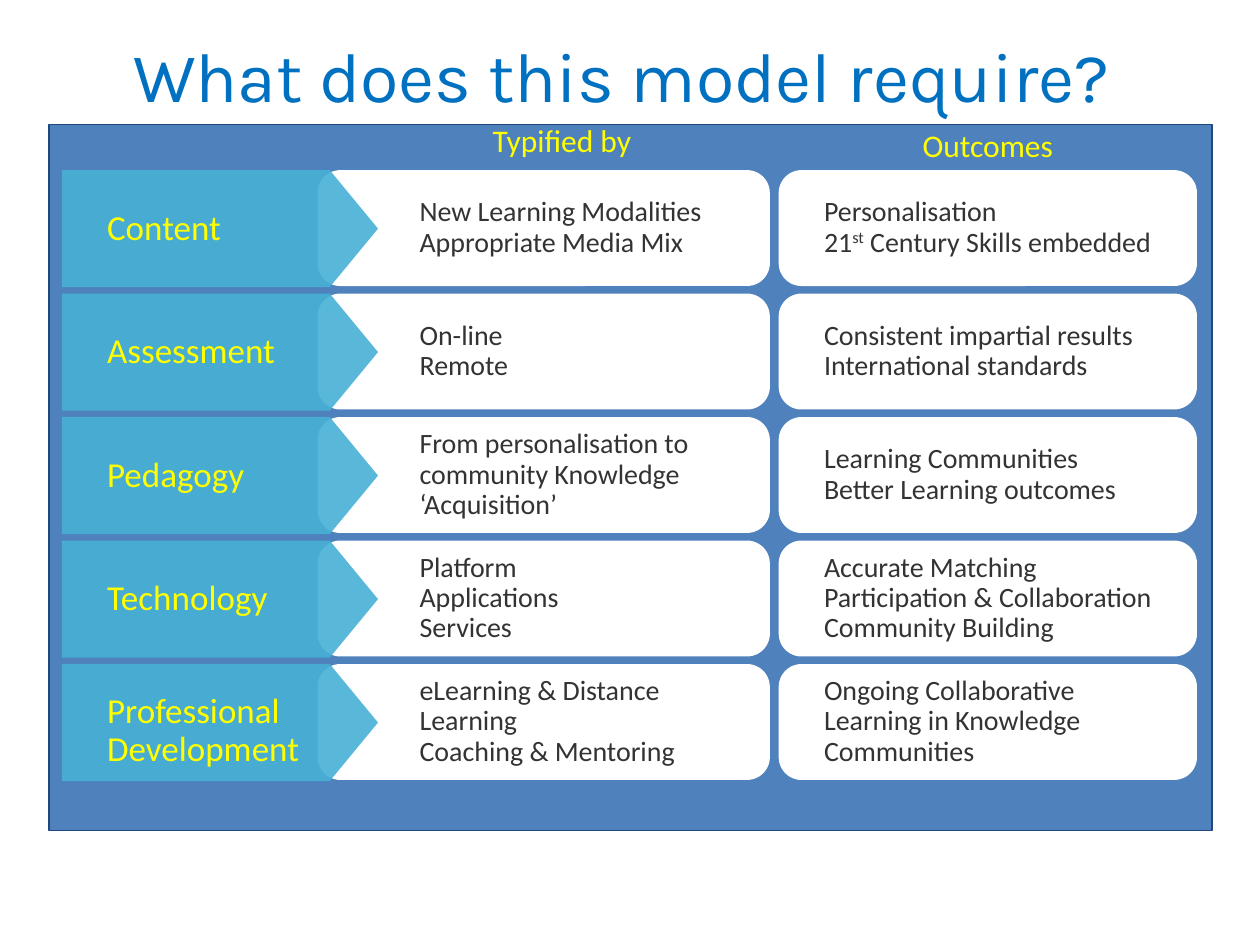
from lxml.etree import SubElement
from pptx import Presentation
from pptx.dml.color import RGBColor
from pptx.enum.shapes import MSO_SHAPE as Shape
from pptx.enum.text import MSO_ANCHOR as Anchor, MSO_AUTO_SIZE as AutoSize, PP_ALIGN as Align
from pptx.oxml.ns import qn
from pptx.util import Inches, Pt

TITLE_BLUE = RGBColor(0x00, 0x70, 0xC0)
PANEL_BLUE = RGBColor(0x4F, 0x81, 0xBD)
PANEL_EDGE = RGBColor(0x1F, 0x49, 0x7D)
ARROW_BLUE = RGBColor(0x47, 0xB0, 0xD5)
YELLOW = RGBColor(0xFF, 0xFF, 0x00)
WHITE = RGBColor(0xFF, 0xFF, 0xFF)
DARK = RGBColor(0x33, 0x33, 0x33)

TITLE = "What does this model require?"
HEADINGS = ("Typified by", "Outcomes")
SUPERSCRIPT = "st"  # a run made of exactly this text is raised

# (requirement, typified by, outcomes, lines in each); a paragraph is a tuple of runs
ROWS = [
    ("Content",
     [("New Learning Modalities",), ("Appropriate Media Mix",)],
     [("Personalisation",), ("21", SUPERSCRIPT, " Century Skills embedded")], (1, 2, 2)),
    ("Assessment",
     [("On-line",), ("Remote",)],
     [("Consistent impartial results",), ("International standards",)], (1, 2, 2)),
    ("Pedagogy",
     [("From personalisation to community Knowledge ‘Acquisition’",)],
     [("Learning Communities",), ("Better Learning outcomes",)], (1, 3, 2)),
    ("Technology",
     [("Platform",), ("Applications",), ("Services",)],
     [("Accurate Matching",), ("Participation & Collaboration",), ("Community Building",)],
     (1, 3, 3)),
    ("Professional Development",
     [("eLearning & Distance Learning",), ("Coaching & Mentoring",)],
     [("Ongoing Collaborative Learning in Knowledge Communities",)], (1, 3, 3)),
]

ROW_TOP, ROW_PITCH = 1.35, 0.98
CARD_HEIGHT, ARROW_HEIGHT = 0.92, 0.93
ARROW_LEFT, ARROW_WIDTH = 0.49, 2.51
LABEL_LEFT, LABEL_WIDTH = 0.76, 1.8
TEXT_WIDTH, HEADING_WIDTH = 2.85, 2.82
TEXT_HEIGHTS = {2: 0.57, 3: 0.81}
# card left, card width, text left, heading left, heading top
COLUMNS = [(2.52, 3.59, 3.24, 3.05, 0.95), (6.18, 3.32, 6.45, 6.43, 0.99)]


def add_block(shapes, kind, left, top, width, height, color, adjust=None, alpha=None):
    block = shapes.add_shape(kind, Inches(left), Inches(top), Inches(width), Inches(height))
    block.shadow.inherit = False
    block.fill.solid()
    block.fill.fore_color.rgb = color
    block.line.fill.background()
    if adjust is not None:
        block.adjustments[0] = adjust
    if alpha is not None:
        rgb = block.fill._xPr.find(qn("a:solidFill")).find(qn("a:srgbClr"))
        SubElement(rgb, qn("a:alpha")).set("val", str(alpha * 1000))
    return block


def add_text(shapes, left, top, width, height, paragraphs, size, color,
             align=Align.LEFT, font="Calibri", spacing=0.9):
    box = shapes.add_textbox(Inches(left), Inches(top), Inches(width), Inches(height))
    frame = box.text_frame
    frame.word_wrap = True
    frame.auto_size = AutoSize.SHAPE_TO_FIT_TEXT
    frame.vertical_anchor = Anchor.MIDDLE
    frame.margin_left = frame.margin_right = Inches(0.09)
    frame.margin_top = frame.margin_bottom = Inches(0.04)
    for number, runs in enumerate(paragraphs):
        paragraph = frame.add_paragraph() if number else frame.paragraphs[0]
        paragraph.alignment = align
        paragraph.line_spacing = spacing
        for words in runs:
            run = paragraph.add_run()
            run.text = words
            run.font.name = font
            run.font.size = Pt(size)
            run.font.color.rgb = color
            if words == SUPERSCRIPT:
                run._r.get_or_add_rPr().set("baseline", "30000")
    return box


def add_cards(shapes, column):
    left, width = COLUMNS[column][:2]
    for row in range(len(ROWS)):
        add_block(shapes, Shape.ROUNDED_RECTANGLE, left, ROW_TOP + row * ROW_PITCH,
                  width, CARD_HEIGHT, WHITE, adjust=0.197)


def add_heading(shapes, column):
    left, top = COLUMNS[column][3:]
    add_text(shapes, left, top, HEADING_WIDTH, 0.36, [(HEADINGS[column],)],
             18, YELLOW, Align.CENTER)


def add_card_texts(shapes, column):
    for row, entry in enumerate(ROWS):
        height = TEXT_HEIGHTS[entry[3][column + 1]]
        top = ROW_TOP + row * ROW_PITCH + (CARD_HEIGHT - height) / 2
        add_text(shapes, COLUMNS[column][2], top, TEXT_WIDTH, height,
                 entry[column + 1], 16, DARK)


def add_requirements(shapes):
    for row in range(len(ROWS)):
        add_block(shapes, Shape.PENTAGON, ARROW_LEFT, ROW_TOP + row * ROW_PITCH,
                  ARROW_WIDTH, ARROW_HEIGHT, ARROW_BLUE, adjust=0.412, alpha=90)
    for row, (label, *_) in enumerate(ROWS):
        two_lines = " " in label
        height, drop = (0.69, 0.07) if two_lines else (0.39, 0)
        top = ROW_TOP + row * ROW_PITCH + (ARROW_HEIGHT - height) / 2 + drop
        add_text(shapes, LABEL_LEFT, top, LABEL_WIDTH, height, [(label,)], 20, YELLOW)


def main():
    deck = Presentation()
    deck.slide_width, deck.slide_height = Inches(10), Inches(7.5)
    shapes = deck.slides.add_slide(deck.slide_layouts[6]).shapes

    title = add_text(shapes, 0.43, -0.03, 9, 1.25, [(TITLE,)], 40, TITLE_BLUE,
                     Align.CENTER, "Karla", 1.0)
    title.text_frame.auto_size = AutoSize.NONE
    panel = add_block(shapes, Shape.RECTANGLE, 0.39, 0.99, 9.23, 5.6, PANEL_BLUE)
    panel.line.color.rgb = PANEL_EDGE
    panel.line.width = Pt(0.75)

    add_heading(shapes, 0)
    add_cards(shapes, 0)
    add_requirements(shapes)
    add_card_texts(shapes, 0)

    outcomes = shapes.add_group_shape().shapes
    add_cards(outcomes, 1)
    add_heading(outcomes, 1)
    add_card_texts(outcomes, 1)
    deck.save("out.pptx")


if __name__ == "__main__":
    main()
